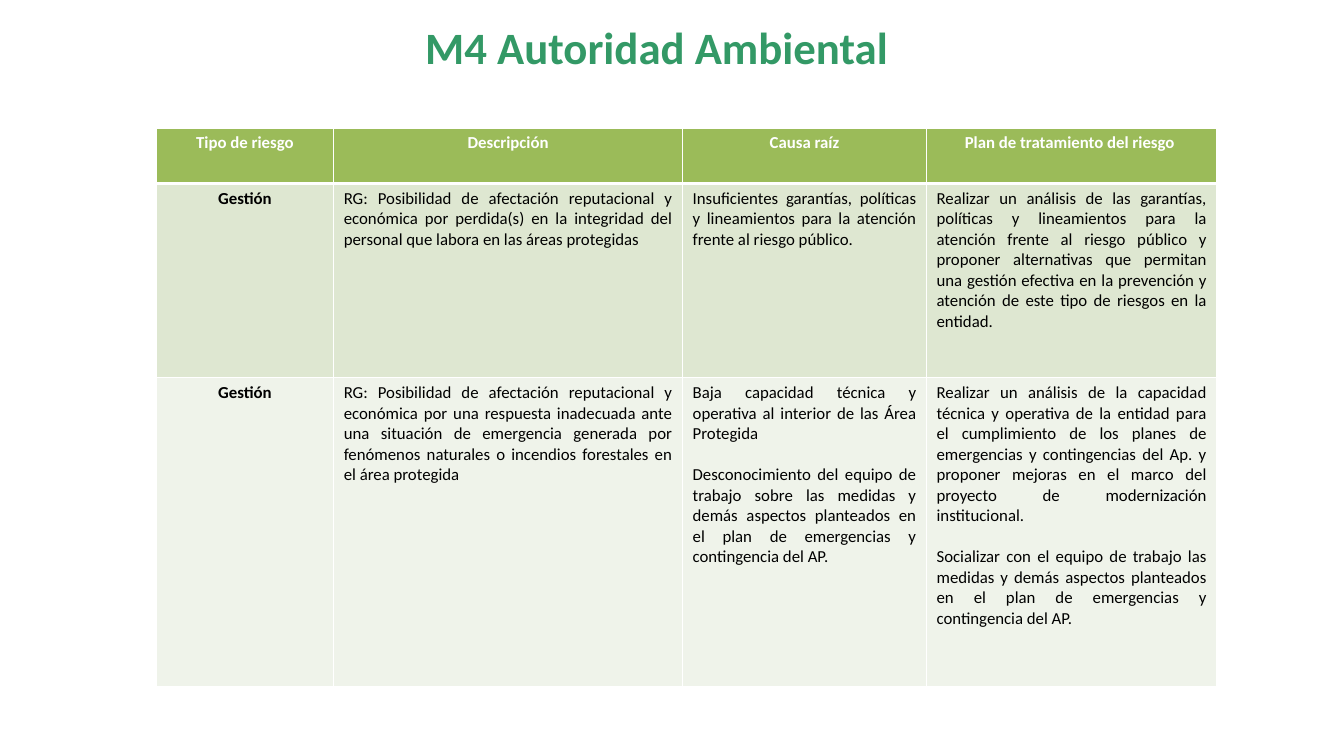
import pptx
import pptx.dml.color
import pptx.enum.text
import pptx.oxml.ns
import pptx.util
from lxml import etree

SLIDE_WIDTH = pptx.util.Inches(13.33)
SLIDE_HEIGHT = pptx.util.Inches(7.5)
FONT = "Calibri"
WHITE = "FFFFFF"
BLACK = "000000"
TITLE_GREEN = "339966"
ROW_FILLS = ["9BBB59", "DEE7D1", "EFF3EA"]
COLUMN_SHARES = [13.2, 25.96, 18.15, 21.61]
ROW_SHARES = [7.33, 25.73, 40.8]
CENTER = pptx.enum.text.PP_ALIGN.CENTER
JUSTIFY = pptx.enum.text.PP_ALIGN.JUSTIFY

HEADINGS = ["Tipo de riesgo", "Descripción", "Causa raíz", "Plan de tratamiento del riesgo "]
RISKS = [
    [
        "Gestión",
        "RG: Posibilidad de afectación reputacional y económica por perdida(s) en la "
        "integridad del personal que labora en las áreas protegidas",
        "Insuficientes garantías, políticas y lineamientos para la atención frente al "
        "riesgo público.",
        "Realizar un análisis de las garantías, políticas y lineamientos para la atención "
        "frente al riesgo público y proponer alternativas que permitan una gestión efectiva "
        "en la prevención y atención de este tipo de riesgos en la entidad.",
    ],
    [
        "Gestión",
        "RG: Posibilidad de afectación reputacional y económica por una respuesta inadecuada "
        "ante una situación de emergencia generada por fenómenos naturales o incendios "
        "forestales en el área protegida",
        "Baja capacidad técnica y operativa al interior de las Área Protegida\n"
        "Desconocimiento del equipo de trabajo sobre las medidas y demás aspectos planteados "
        "en el plan de emergencias y contingencia del AP.",
        "Realizar un análisis de la capacidad técnica y operativa de la entidad para el "
        "cumplimiento de los planes de emergencias y contingencias del Ap. y proponer mejoras "
        "en el marco del proyecto de modernización institucional.\n"
        "Socializar con el equipo de trabajo las medidas y demás aspectos planteados en el "
        "plan de emergencias y contingencia del AP.",
    ],
]


def across(percent):
    return round(SLIDE_WIDTH * percent / 100)


def down(percent):
    return round(SLIDE_HEIGHT * percent / 100)


def color(value):
    return pptx.dml.color.RGBColor.from_string(value)


def write_text(frame, text, size, text_color, bold, alignment):
    for index, line in enumerate(text.split("\n")):
        paragraph = frame.add_paragraph() if index else frame.paragraphs[0]
        paragraph.alignment = alignment
        if index:
            paragraph.space_before = pptx.util.Pt(14.65)
        run = paragraph.add_run()
        run.text = line
        run.font.name = FONT
        run.font.size = pptx.util.Pt(size)
        run.font.bold = bold
        run.font.color.rgb = color(text_color)


def add_title(slide, text):
    shape = slide.shapes.add_textbox(across(13.43), down(2.67), across(70.89), down(7.2))
    frame = shape.text_frame
    frame.word_wrap = True
    frame.margin_left = frame.margin_top = frame.margin_right = frame.margin_bottom = 0
    write_text(frame, text, 32, TITLE_GREEN, True, CENTER)


def set_borders(cell, widths):
    properties = cell._tc.get_or_add_tcPr()
    for side, width in widths.items():
        line = etree.SubElement(properties, pptx.oxml.ns.qn(f"a:ln{side}"), w=str(pptx.util.Pt(width)))
        fill = etree.SubElement(line, pptx.oxml.ns.qn("a:solidFill"))
        etree.SubElement(fill, pptx.oxml.ns.qn("a:srgbClr"), val=WHITE)


def fill_cell(cell, text, row, column):
    is_heading = row == 0
    set_borders(cell, {"L": 1, "R": 1, "T": 3 if row == 1 else 1, "B": 3 if is_heading else 1})
    cell.fill.solid()
    cell.fill.fore_color.rgb = color(ROW_FILLS[row])
    is_label = is_heading or column == 0
    write_text(cell.text_frame, text, 12, WHITE if is_heading else BLACK,
               is_label, CENTER if is_label else JUSTIFY)


def add_risk_table(slide, rows):
    frame = slide.shapes.add_table(len(rows), len(COLUMN_SHARES), across(11.63), down(16.93),
                                   across(sum(COLUMN_SHARES)), down(sum(ROW_SHARES)))
    table = frame.table
    for column, share in zip(table.columns, COLUMN_SHARES):
        column.width = across(share)
    for row, share in zip(table.rows, ROW_SHARES):
        row.height = down(share)
    for row, texts in enumerate(rows):
        for column, text in enumerate(texts):
            fill_cell(table.cell(row, column), text, row, column)


def main():
    presentation = pptx.Presentation()
    presentation.slide_width = SLIDE_WIDTH
    presentation.slide_height = SLIDE_HEIGHT
    slide = presentation.slides.add_slide(presentation.slide_layouts[6])
    add_title(slide, "M4 Autoridad Ambiental")
    add_risk_table(slide, [HEADINGS] + RISKS)
    presentation.save("out.pptx")


if __name__ == "__main__":
    main()
